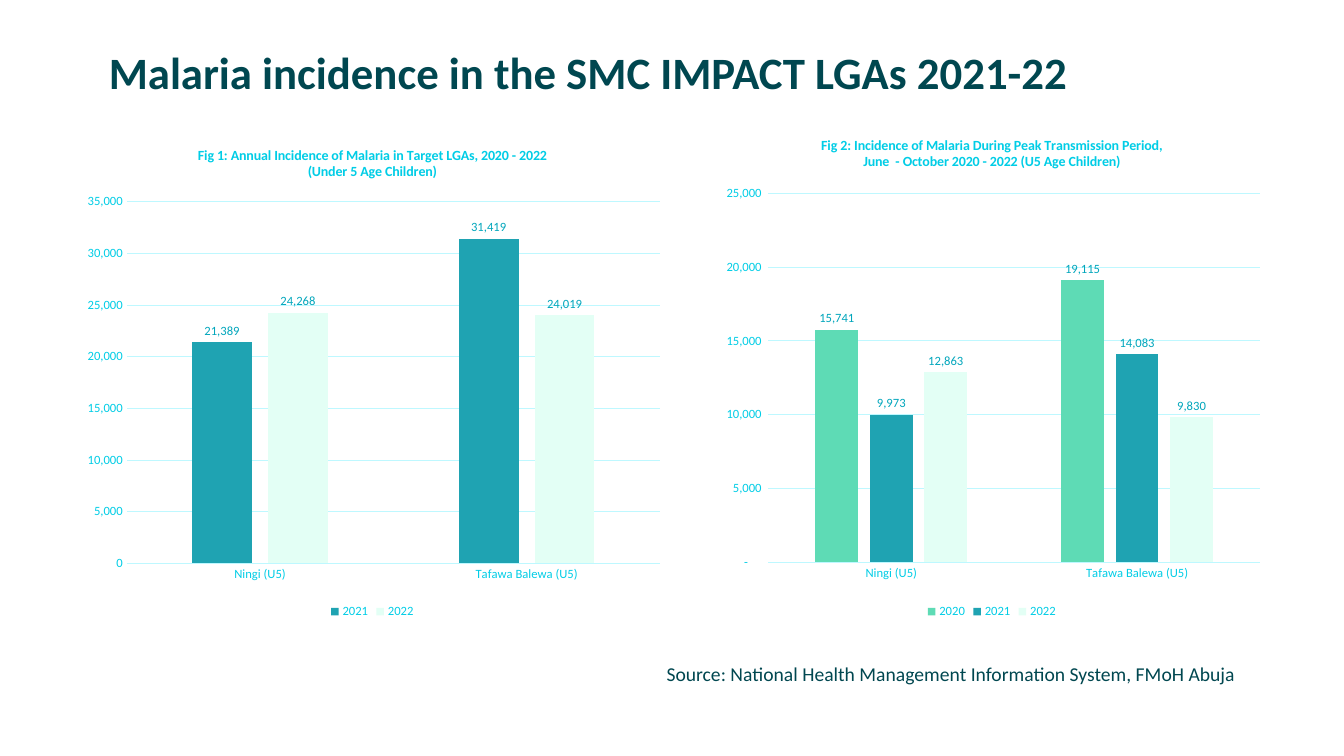
from lxml import etree
from pptx import Presentation
from pptx.chart.data import CategoryChartData
from pptx.dml.color import RGBColor
from pptx.enum.chart import XL_CHART_TYPE as CT, XL_LABEL_POSITION as LP
from pptx.enum.chart import XL_LEGEND_POSITION as LEG, XL_TICK_MARK as TICK
from pptx.enum.text import MSO_ANCHOR, PP_ALIGN
from pptx.oxml.ns import qn
from pptx.util import Pt


def rgb(value):
    return RGBColor.from_string(value)


def style(font, size, color, bold=False):
    for name, value in {"name": "Calibri", "size": Pt(size), "bold": bold}.items():
        setattr(font, name, value)
    font.color.rgb = rgb(color)


DARK, CYAN, LABEL, GRID = "004750", "00CDE6", "00A6BC", "BEF8FF"
YEAR_COLORS = {"2020": "5EDBB5", "2021": "1FA3B2", "2022": "E3FFF5"}
DISTRICTS = ["Ningi (U5)", "Tafawa Balewa (U5)"]

figures = [
    {
        "box": (52, 91, 428, 354),
        "plot": {"x": 0.09, "y": 0.15, "w": 0.89, "h": 0.73},
        "title": ["Fig 1: Annual Incidence of Malaria in Target LGAs, 2020 - 2022",
                  "(Under 5 Age Children)"],
        "format": "#,##0",
        "top": 35000,
        "cases": {"2021": (21389, 31419), "2022": (24268, 24019)},
    },
    {
        "box": (509, 84, 399, 361),
        "plot": {"x": 0.1, "y": 0.15, "w": 0.88, "h": 0.73},
        "title": ["Fig 2: Incidence of Malaria During Peak Transmission Period,",
                  "June  - October 2020 - 2022 (U5 Age Children)"],
        "format": '_-* #,##0_-;\\-* #,##0_-;_-* "-"??_-;_-@_',
        "top": 25000,
        "cases": {"2020": (15741, 19115), "2021": (9973, 14083), "2022": (12863, 9830)},
    },
]

prs = Presentation()
prs.slide_width, prs.slide_height = Pt(960), Pt(540)
s = prs.slides.add_slide(prs.slide_layouts[5])

title = s.shapes.title
title.left, title.top, title.width, title.height = Pt(70.5), Pt(28), Pt(841), Pt(46)
tf = title.text_frame
tf.vertical_anchor = MSO_ANCHOR.MIDDLE
p = tf.paragraphs[0]
p.alignment = PP_ALIGN.LEFT
r = p.add_run()
r.text = "Malaria incidence in the SMC IMPACT LGAs 2021-22"
style(r.font, 32, DARK, True)

for fig in figures:
    data = CategoryChartData(number_format=fig["format"])
    data.categories = DISTRICTS
    for year, values in fig["cases"].items():
        data.add_series(year, values)
    box = [Pt(v) for v in fig["box"]]
    chart = s.shapes.add_chart(CT.COLUMN_CLUSTERED, *box, data).chart
    style(chart.font, 10, DARK)

    tf = chart.chart_title.text_frame
    tf.text = "\n".join(fig["title"])
    for p in tf.paragraphs:
        style(p.runs[0].font, 10, CYAN, True)
    chart.chart_title.include_in_layout = False

    chart.has_legend = True
    chart.legend.position = LEG.BOTTOM
    chart.legend.include_in_layout = False
    style(chart.legend.font, 9, CYAN)

    cat_axis, val_axis = chart.category_axis, chart.value_axis
    for axis in (cat_axis, val_axis):
        axis.major_tick_mark = axis.minor_tick_mark = TICK.NONE
        style(axis.tick_labels.font, 9, CYAN)
    val_axis.format.line.fill.background()
    val_axis.minimum_scale, val_axis.maximum_scale = 0, fig["top"]
    val_axis.major_unit = 5000
    val_axis.tick_labels.number_format = fig["format"]
    val_axis.tick_labels.number_format_is_linked = False
    for line in (cat_axis.format.line, val_axis.major_gridlines.format.line):
        line.color.rgb = rgb(GRID)
        line.width = Pt(0.75)

    plot = chart.plots[0]
    plot.gap_width, plot.overlap, plot.vary_by_categories = 219, -27, False
    for series in plot.series:
        series.format.fill.solid()
        series.format.fill.fore_color.rgb = rgb(YEAR_COLORS[series.name])
        labels = series.data_labels
        labels.show_value = True
        labels.position = LP.OUTSIDE_END
        labels.number_format = fig["format"]
        labels.number_format_is_linked = False
        style(labels.font, 9, LABEL)

    area = chart.element.find(".//" + qn("c:plotArea"))
    for old in area.findall(qn("c:layout")):
        area.remove(old)
    layout = etree.Element(qn("c:layout"))
    area.insert(0, layout)
    manual = etree.SubElement(layout, qn("c:manualLayout"))
    settings = {"layoutTarget": "inner", "xMode": "edge", "yMode": "edge", **fig["plot"]}
    for tag, value in settings.items():
        etree.SubElement(manual, qn("c:" + tag)).set("val", str(value))

tf = s.shapes.add_textbox(Pt(469), Pt(469), Pt(425), Pt(24)).text_frame
tf.word_wrap = False
r = tf.paragraphs[0].add_run()
r.text = "Source: National Health Management Information System, FMoH Abuja"
style(r.font, 14, DARK)

prs.save("out.pptx")
